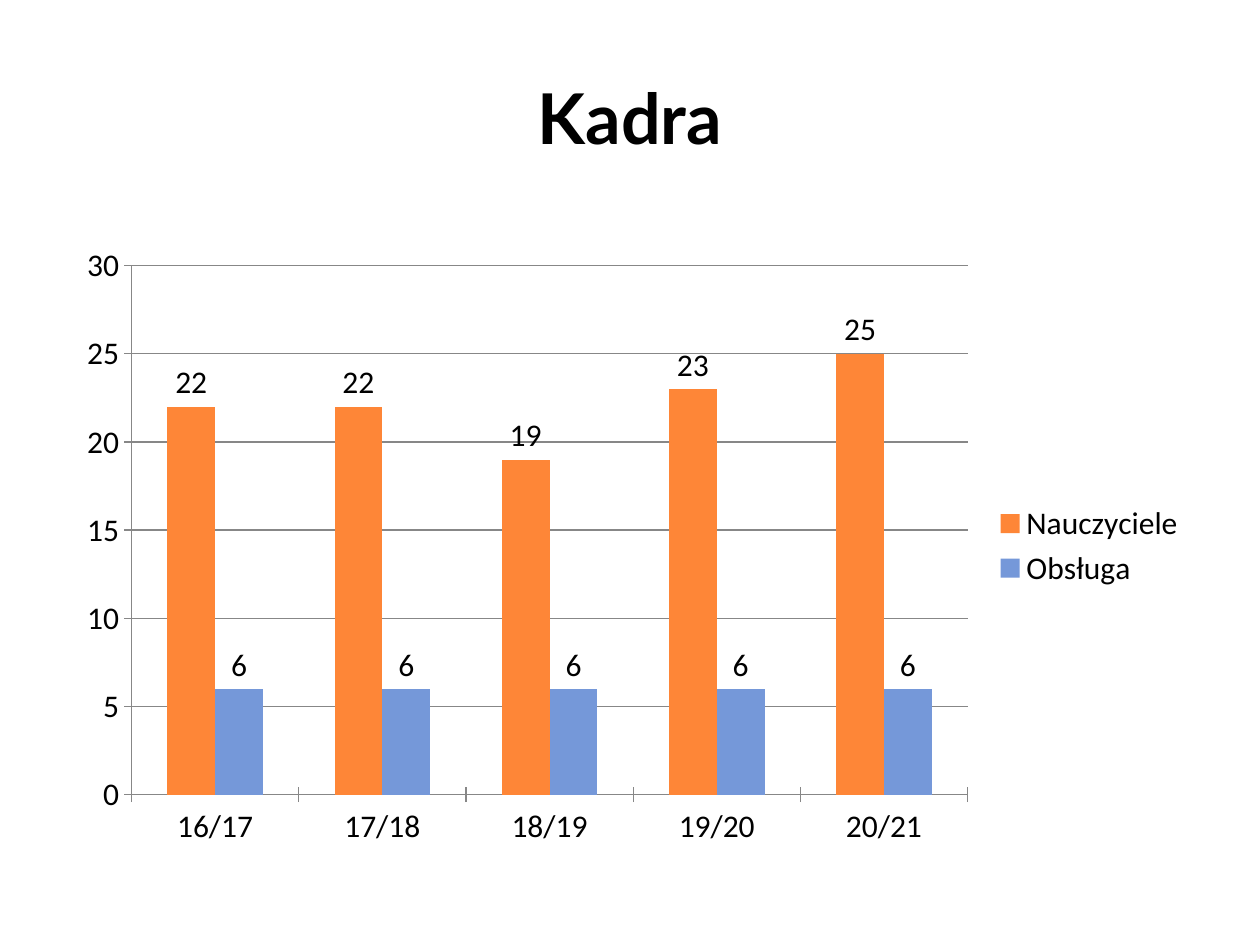
from pptx import Presentation
from pptx.chart.data import CategoryChartData as Data
from pptx.dml.color import RGBColor as Rgb
from pptx.enum.chart import XL_CHART_TYPE as Kind, XL_LABEL_POSITION as Spot
from pptx.enum.chart import XL_LEGEND_POSITION as Side, XL_TICK_MARK as Tick
from pptx.enum.text import MSO_ANCHOR as Anchor, PP_ALIGN as Align
from pptx.util import Cm, Pt

HUES = {"text": "000000", "line": "878787", "staff": "FE8637", "crew": "7598D9"}
YEARS = ["16/17", "17/18", "18/19", "19/20", "20/21"]
ROWS = [
    ("Nauczyciele", [22, 22, 19, 23, 25], "staff"),
    ("Obsługa", [6] * len(YEARS), "crew"),
]


def hue(name):
    return Rgb.from_string(HUES[name])


def style(font, face, size, bold=False):
    font.name = face
    font.size = Pt(size)
    font.bold = bold
    font.color.rgb = hue("text")


def add_title(slide, box, text):
    frame = slide.shapes.add_textbox(*map(Cm, box)).text_frame
    frame.word_wrap = True
    frame.vertical_anchor = Anchor.MIDDLE
    para = frame.paragraphs[0]
    para.alignment = Align.CENTER
    run = para.add_run()
    run.text = text
    style(run.font, "Lato", 40, True)


def add_bars(slide, box):
    data = Data()
    data.categories = YEARS
    for name, vals, _ in ROWS:
        data.add_series(name, vals)
    chart = slide.shapes.add_chart(Kind.COLUMN_CLUSTERED, *map(Cm, box), data).chart
    style(chart.font, "Calibri", 18)
    chart.has_title = False
    chart.has_legend = True
    chart.legend.position = Side.RIGHT
    chart.legend.include_in_layout = False

    for axis in (chart.category_axis, chart.value_axis):
        axis.major_tick_mark = Tick.CROSS
        axis.minor_tick_mark = Tick.NONE
        axis.format.line.color.rgb = hue("line")
        axis.format.line.width = Pt(0.75)
    value = chart.value_axis
    value.minimum_scale, value.maximum_scale, value.major_unit = 0, 30, 5
    value.has_major_gridlines = True
    grid = value.major_gridlines.format.line
    grid.color.rgb = hue("line")
    grid.width = Pt(0.75)

    plot = chart.plots[0]
    plot.gap_width = 150
    plot.overlap = 0
    plot.vary_by_categories = False
    for bars, (_, _, tone) in zip(plot.series, ROWS):
        bars.format.fill.solid()
        bars.format.fill.fore_color.rgb = hue(tone)
        bars.invert_if_negative = False
        bars.data_labels.show_value = True
        bars.data_labels.position = Spot.OUTSIDE_END


def main():
    deck = Presentation()
    deck.slide_width, deck.slide_height = Cm(25.4), Cm(19.05)
    slide = deck.slides.add_slide(deck.slide_layouts[6])
    add_title(slide, (1.27, 0.76, 22.86, 3.18), "Kadra")
    add_bars(slide, (1.3, 4.72, 22.86, 12.57))
    deck.save("out.pptx")


if __name__ == "__main__":
    main()
